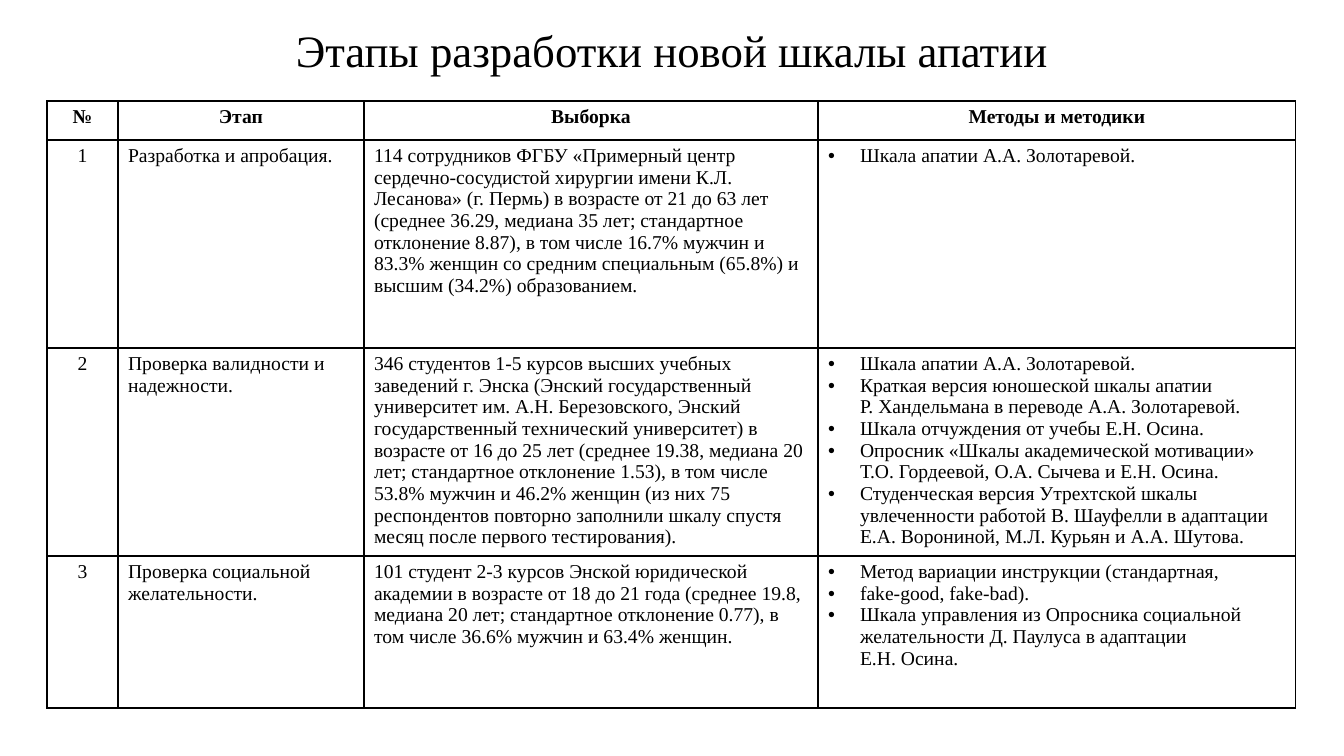
from lxml.etree import SubElement
from pptx import Presentation
from pptx.dml.color import RGBColor
from pptx.enum.text import MSO_ANCHOR as Anchor, MSO_AUTO_SIZE as AutoSize, PP_ALIGN as Align
from pptx.oxml.ns import qn
from pptx.util import Emu, Pt

SCALE = 914400 / 100.8
COLORS = {"text": "000000", "border": "000000"}
TITLE_FONT = {"name": "Times New Roman", "size": Pt(32), "bold": False}
CELL_FONT = {"name": "Times New Roman", "size": Pt(14), "bold": False}
HEAD_FONT = {**CELL_FONT, "bold": True}
COLUMNS = [71, 246, 454, 478]
ROWS = [39, 208, 208, 152]
INDENT = 32

TITLE = "Этапы разработки новой шкалы апатии"
HEADERS = ["№", "Этап", "Выборка", "Методы и методики"]
STAGES = [
    ("Разработка и апробация.",
     "114 сотрудников ФГБУ «Примерный центр сердечно-сосудистой хирургии имени К.Л. Лесанова» "
     "(г. Пермь) в возрасте от 21 до 63 лет (среднее 36.29, медиана 35 лет; стандартное отклонение "
     "8.87), в том числе 16.7% мужчин и 83.3% женщин со средним специальным (65.8%) и высшим "
     "(34.2%) образованием.",
     ["Шкала апатии А.А. Золотаревой."]),
    ("Проверка валидности и надежности.",
     "346 студентов 1-5 курсов высших учебных заведений г. Энска (Энский государственный "
     "университет им. А.Н. Березовского, Энский государственный технический университет) в "
     "возрасте от 16 до 25 лет (среднее 19.38, медиана 20 лет; стандартное отклонение 1.53), в том "
     "числе 53.8% мужчин и 46.2% женщин (из них 75 респондентов повторно заполнили шкалу спустя "
     "месяц после первого тестирования).",
     ["Шкала апатии А.А. Золотаревой.",
      "Краткая версия юношеской шкалы апатии\vР. Хандельмана в переводе А.А. Золотаревой.",
      "Шкала отчуждения от учебы Е.Н. Осина.",
      "Опросник «Шкалы академической мотивации» Т.О. Гордеевой, О.А. Сычева и Е.Н. Осина.",
      "Студенческая версия Утрехтской шкалы увлеченности работой В. Шауфелли в адаптации "
      "Е.А. Ворониной, М.Л. Курьян и А.А. Шутова."]),
    ("Проверка социальной желательности.",
     "101 студент 2-3 курсов Энской юридической академии в возрасте от 18 до 21 года (среднее 19.8, "
     "медиана 20 лет; стандартное отклонение 0.77), в том числе 36.6% мужчин и 63.4% женщин.",
     ["Метод вариации инструкции (стандартная,",
      "fake-good, fake-bad).",
      "Шкала управления из Опросника социальной желательности Д. Паулуса в адаптации\vЕ.Н. Осина."]),
]


def px(n):
    return Emu(round(n * SCALE))


def write(p, text, font, align):
    p.text = text
    p.alignment = align
    for r in p.runs:
        for key, value in font.items():
            setattr(r.font, key, value)
        r.font.color.rgb = RGBColor.from_string(COLORS["text"])
    for br in p._p.findall(qn("a:br")):
        SubElement(br, qn("a:rPr"), sz=str(font["size"].centipoints))


def add_bullet(p):
    pPr = p._p.get_or_add_pPr()
    pPr.set("marL", str(px(INDENT)))
    pPr.set("indent", str(-px(INDENT)))
    SubElement(pPr, qn("a:buFont"), typeface="Arial")
    SubElement(pPr, qn("a:buChar"), char="•")


def add_borders(cell):
    tcPr = cell._tc.get_or_add_tcPr()
    for side in ("lnL", "lnR", "lnT", "lnB"):
        ln = SubElement(tcPr, qn(f"a:{side}"), w=str(Pt(1)))
        fill = SubElement(ln, qn("a:solidFill"))
        SubElement(fill, qn("a:srgbClr"), val=COLORS["border"])


def fill_cell(cell, content, font, align):
    add_borders(cell)
    cell.fill.background()
    tf = cell.text_frame
    bulleted = isinstance(content, list)
    for i, text in enumerate(content if bulleted else [content]):
        p = tf.add_paragraph() if i else tf.paragraphs[0]
        write(p, text, font, align)
        if bulleted:
            add_bullet(p)


def add_title(s, x, y, w, h):
    title = s.shapes.title
    box = {"left": px(x), "top": px(y), "width": px(w), "height": px(h)}
    for key, value in box.items():
        setattr(title, key, value)
    tf = title.text_frame
    frame = {"word_wrap": True, "auto_size": AutoSize.NONE, "vertical_anchor": Anchor.BOTTOM}
    for key, value in frame.items():
        setattr(tf, key, value)
    p = tf.paragraphs[0]
    write(p, TITLE, TITLE_FONT, Align.CENTER)
    p.line_spacing = 0.9


def add_stages(s, x, y):
    table = s.shapes.add_table(len(ROWS), len(COLUMNS), px(x), px(y),
                               px(sum(COLUMNS)), px(sum(ROWS))).table
    table.first_row = table.horz_banding = False
    for column, w in zip(table.columns, COLUMNS):
        column.width = px(w)
    for row, h in zip(table.rows, ROWS):
        row.height = px(h)
    for j, text in enumerate(HEADERS):
        fill_cell(table.cell(0, j), text, HEAD_FONT, Align.CENTER)
    for i, stage in enumerate(STAGES, 1):
        for j, content in enumerate((str(i), *stage)):
            fill_cell(table.cell(i, j), content, CELL_FONT, Align.LEFT if j else Align.CENTER)


def main():
    prs = Presentation()
    prs.slide_width, prs.slide_height = px(1344), px(756)
    s = prs.slides.add_slide(prs.slide_layouts[5])
    add_title(s, 0, 10, 1344, 72)
    add_stages(s, 47, 101)
    prs.save("out.pptx")


if __name__ == "__main__":
    main()
